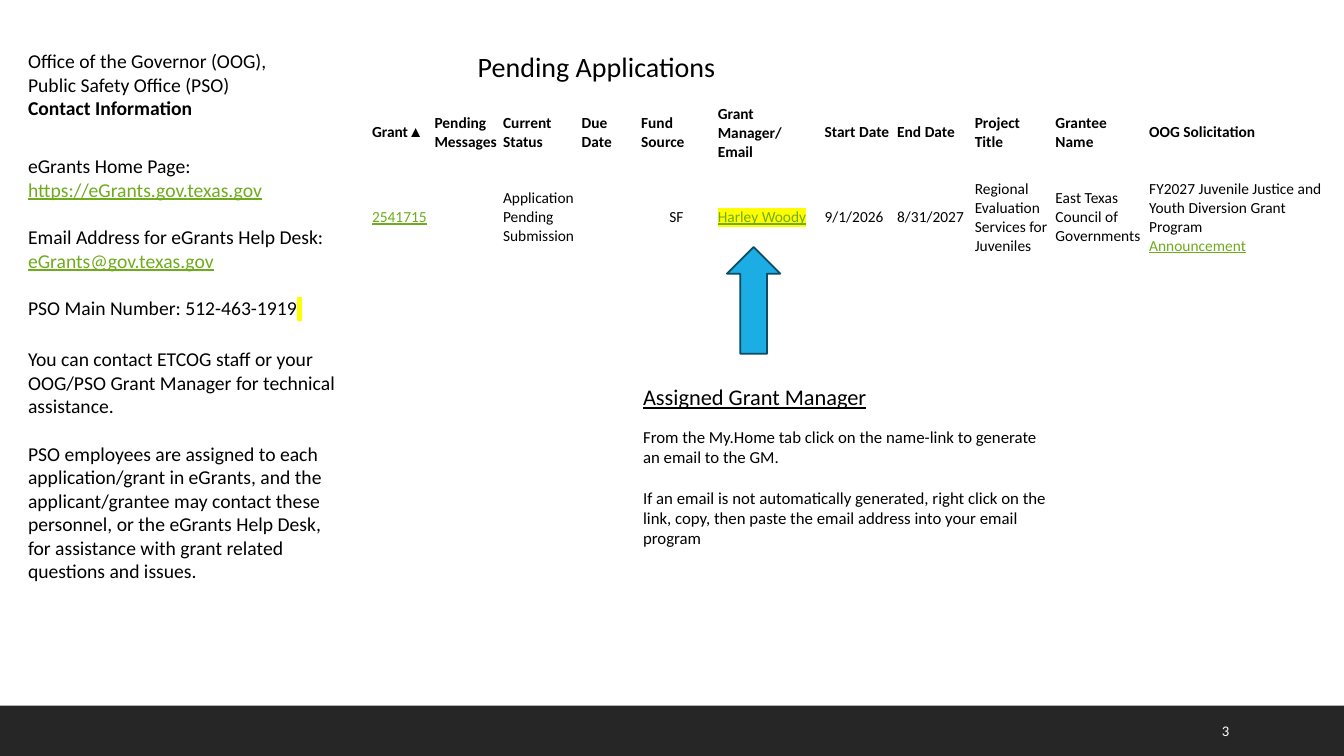
import pptx
import pptx.util
import pptx.dml.color
import pptx.enum.shapes
import pptx.enum.text
import pptx.oxml
import pptx.oxml.ns
from pptx.util import Inches

BLACK, WHITE, LINK, YELLOW = "000000", "FFFFFF", "6EAC1C", "FFFF00"
MIDDLE = pptx.enum.text.MSO_ANCHOR.MIDDLE
LINKED = {"color": LINK, "underline": True}

# Each paragraph is (space before in points, runs); each run is (text, style).
CONTACT = [
    (0, [("Office of the Governor (OOG),", {})]),
    (0, [("Public Safety Office (PSO)", {})]),
    (0, [("Contact Information", {"bold": True})]),
    (24.4, [("eGrants Home Page:", {})]),
    (0, [("https://eGrants.gov.texas.gov", LINKED)]),
    (17.1, [("Email Address for eGrants Help Desk:", {})]),
    (0, [("eGrants@gov.texas.gov", LINKED)]),
    (17.1, [("PSO Main Number: 512-463-1919", {}), (" ", {"highlight": YELLOW})]),
    (19.5, [("You can contact ETCOG staff or your OOG/PSO Grant Manager "
             "for technical assistance.", {})]),
    (17.1, [("PSO employees are assigned to each application/grant in eGrants, "
             "and the applicant/grantee may contact these personnel, or the "
             "eGrants Help Desk, for assistance with grant related questions "
             "and issues.", {})]),
]
MANAGER = [
    (0, [("Assigned Grant Manager", {"size": 16, "underline": True})]),
    (12.2, [("From the My.Home tab click on the name-link to generate "
             "an email to the GM.", {})]),
    (14.6, [("If an email is not automatically generated, right click on the "
             "link, copy, then paste the email address into your email "
             "program", {})]),
]

# Each column is (width, header paragraphs, application paragraphs).
COLUMNS = [
    (0.62, [[("Grant", {}), ("▲", {"font": "Arial"})]], [[("2541715", LINKED)]]),
    (0.68, [[("Pending Messages", {})]], []),
    (0.78, [[("Current Status", {})]], [[("Application Pending Submission", {})]]),
    (0.59, [[("Due Date", {})]], []),
    (0.76, [[("Fund Source", {})]], [[("SF", {})]]),
    (1.06, [[("Grant Manager/", {})], [("Email", {})]],
     [[("Harley Woody", {**LINKED, "highlight": YELLOW})]]),
    (0.72, [[("Start Date", {})]], [[("9/1/2026", {})]]),
    (0.77, [[("End Date", {})]], [[("8/31/2027", {})]]),
    (0.8, [[("Project Title", {})]],
     [[("Regional Evaluation Services for Juveniles", {})]]),
    (0.93, [[("Grantee Name", {})]], [[("East Texas Council of Governments", {})]]),
    (1.88, [[("OOG Solicitation", {})]],
     [[("FY2027 Juvenile Justice and Youth Diversion Grant Program", {})],
      [("Announcement", LINKED)]]),
]
ROW_HEIGHTS = [0.6, 1.07]
FUND_COLUMN = 4


def rgb(value):
    return pptx.dml.color.RGBColor.from_string(value)


def fill_solid(item, color):
    item.fill.solid()
    item.fill.fore_color.rgb = rgb(color)


def add_run(para, text, size, color=BLACK, font="Calibri", bold=False,
            underline=False, highlight=None):
    span = para.add_run()
    span.text = text
    span.font.size = pptx.util.Pt(size)
    span.font.name = font
    span.font.bold = bold
    span.font.underline = underline
    span.font.color.rgb = rgb(color)
    if highlight:
        mark = pptx.oxml.parse_xml(
            f'<a:highlight {pptx.oxml.ns.nsdecls("a")}>'
            f'<a:srgbClr val="{highlight}"/></a:highlight>')
        span.font.fill  # the colour fill must come before the highlight
        span._r.rPr.find(pptx.oxml.ns.qn("a:solidFill")).addnext(mark)


def write_paragraphs(frame, paragraphs, **base):
    """Fill a text frame; a run's own style wins over the base style."""
    for index, (space, runs) in enumerate(paragraphs):
        para = frame.add_paragraph() if index else frame.paragraphs[0]
        if space:
            para.space_before = pptx.util.Pt(space)
        for text, style in runs:
            add_run(para, text, **{**base, **style})


def add_text(page, left, top, width, height, paragraphs, **base):
    box = page.shapes.add_textbox(
        Inches(left), Inches(top), Inches(width), Inches(height))
    box.text_frame.word_wrap = True
    write_paragraphs(box.text_frame, paragraphs, **base)
    return box


def add_shape(page, kind, left, top, width, height, color):
    shape = page.shapes.add_shape(
        kind, Inches(left), Inches(top), Inches(width), Inches(height))
    shape.shadow.inherit = False
    fill_solid(shape, color)
    shape.line.fill.background()
    return shape


def add_applications_table(page, left, top):
    width = sum(column[0] for column in COLUMNS)
    frame = page.shapes.add_table(
        len(ROW_HEIGHTS), len(COLUMNS), Inches(left), Inches(top),
        Inches(width), Inches(sum(ROW_HEIGHTS)))
    table = frame.table
    table.first_row = table.horz_banding = False
    for row, height in zip(table.rows, ROW_HEIGHTS):
        row.height = Inches(height)
    for column_index, (width, *contents) in enumerate(COLUMNS):
        table.columns[column_index].width = Inches(width)
        for row_index, lines in enumerate(contents):
            cell = table.cell(row_index, column_index)
            fill_solid(cell, WHITE)
            cell.vertical_anchor = MIDDLE
            cell.margin_left = cell.margin_right = Inches(0.03)
            cell.margin_top = cell.margin_bottom = Inches(0.03)
            write_paragraphs(cell.text_frame, [(0, runs) for runs in lines],
                             size=11, bold=row_index == 0)
    fund = table.cell(1, FUND_COLUMN).text_frame.paragraphs[0]
    fund.alignment = pptx.enum.text.PP_ALIGN.CENTER


def main():
    deck = pptx.Presentation()
    deck.slide_width, deck.slide_height = Inches(13.33), Inches(7.5)
    page = deck.slides.add_slide(deck.slide_layouts[6])
    shapes = pptx.enum.shapes.MSO_SHAPE

    add_shape(page, shapes.RECTANGLE, 0, 7, 13.33, 0.5, "262626")
    add_text(page, 0.18, 0.44, 3.36, 5.58, CONTACT, size=14)
    number = add_text(page, 12.02, 7.05, 0.85, 0.4, [(0, [("3", {})])],
                      size=10.5, color=WHITE)
    number.text_frame.vertical_anchor = MIDDLE
    add_applications_table(page, 3.66, 1.01)
    add_text(page, 6.28, 3.75, 4.2, 1.75, MANAGER, size=12)
    arrow = add_shape(page, shapes.UP_ARROW, 7.21, 2.45, 0.53, 1.06, "1CADE4")
    arrow.line.color.rgb = rgb("0C4C64")
    arrow.line.width = pptx.util.Pt(1.25)
    add_text(page, 4.64, 0.44, 2.97, 0.44,
             [(0, [("Pending Applications", {})])], size=20)

    deck.save("out.pptx")


if __name__ == "__main__":
    main()
